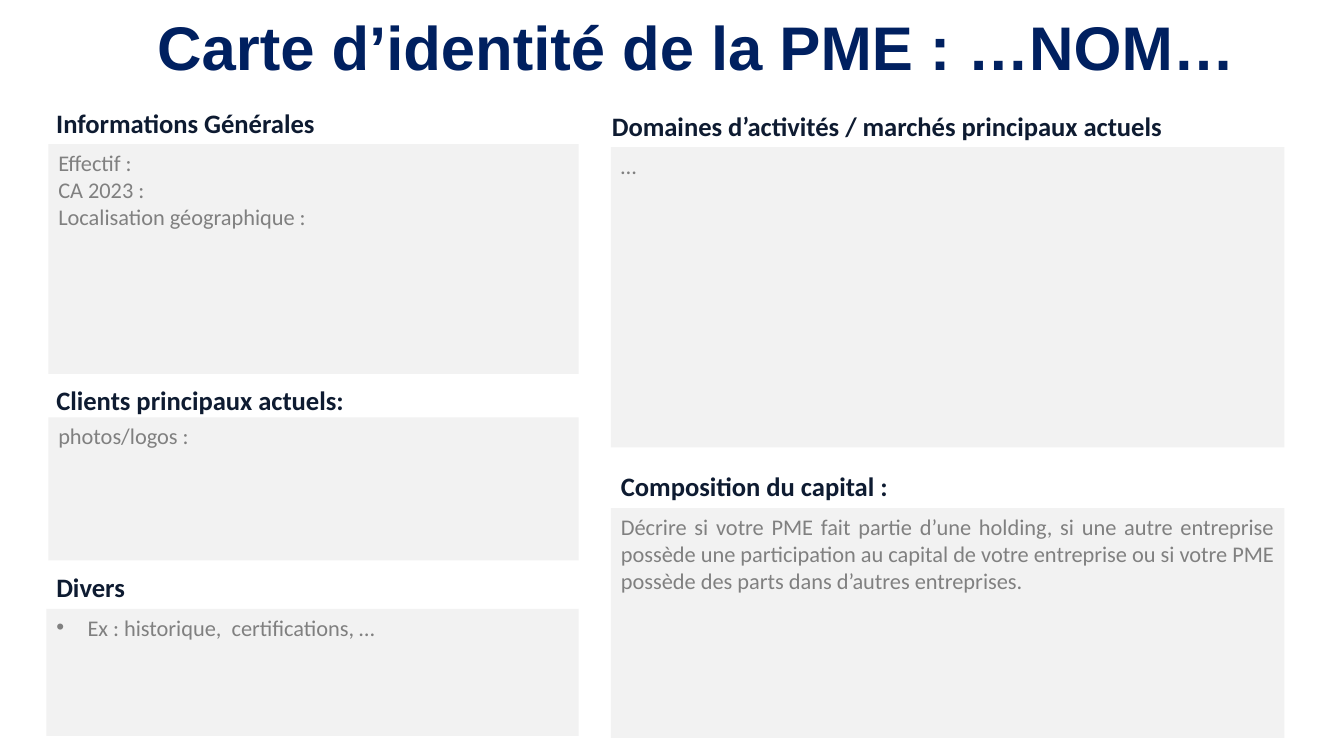
import pptx
import pptx.dml.color
import pptx.enum.shapes
import pptx.enum.text
import pptx.util
from lxml import etree

TITLE = "Carte d’identité de la PME : …NOM…"
NAVY, INK, GREY, PALE = "002060", "0E1B31", "808080", "F2F2F2"
WIDE, HIGH = 13.33, 7.5
LEFT, RIGHT = (0.48, 5.26), (6.06, 6.68)  # column start and width
EDGE = 0.46
HEAD = 0.42
JUST = pptx.enum.text.PP_ALIGN.JUSTIFY
START = pptx.enum.text.PP_ALIGN.LEFT

# heading, heading (left, top, width), column, panel (top, height),
# lines, alignment, bulleted
CARDS = [
    ("Informations Générales", (EDGE, 1.01, 5.86), LEFT, (1.43, 2.28),
     ["Effectif :", "CA 2023 :", "Localisation géographique :"], JUST, False),
    ("Clients principaux actuels:", (EDGE, 3.76, 3.69), LEFT, (4.14, 1.42),
     ["photos/logos :"], START, False),
    ("Divers", (EDGE, 5.61, 2.01), (EDGE, 5.28), (6.04, 1.26),
     ["Ex : historique,  certifications, …"], JUST, True),
    ("Domaines d’activités / marchés principaux actuels", (5.97, 1.04, 6.77),
     RIGHT, (1.46, 2.98), ["…"], JUST, False),
    ("Composition du capital :", (RIGHT[0], 4.61, 3.32), RIGHT, (5.04, 2.28),
     ["Décrire si votre PME fait partie d’une holding, si une autre entreprise "
      "possède une participation au capital de votre entreprise ou si votre PME "
      "possède des parts dans d’autres entreprises."], JUST, False),
]


def paint(text):
    return pptx.dml.color.RGBColor.from_string(text)


def place(*sides):
    return [pptx.util.Inches(side) for side in sides]


def write(shape, lines, size, face, tint, bold=False, align=START, dots=False):
    frame = shape.text_frame
    frame.word_wrap = True
    frame.vertical_anchor = pptx.enum.text.MSO_ANCHOR.TOP
    frame.text = "\n".join(lines)
    for para in frame.paragraphs:
        para.alignment = align
        if dots:
            add_dot(para)
        for run in para.runs:
            run.font.size = pptx.util.Pt(size)
            run.font.name = face
            run.font.bold = bold
            run.font.color.rgb = paint(tint)
    return frame


def add_dot(para):
    props = para._p.get_or_add_pPr()
    indent = pptx.util.Inches(0.31)
    props.set("marL", str(indent))
    props.set("indent", str(-indent))
    space = pptx.oxml.ns.qn
    etree.SubElement(props, space("a:buFont")).set("typeface", "Arial")
    etree.SubElement(props, space("a:buChar")).set("char", "•")


def add_card(shapes, head, spot, column, rows, lines, align, dots):
    start, width = column
    top, height = rows
    panel = shapes.add_shape(pptx.enum.shapes.MSO_SHAPE.RECTANGLE,
                             *place(start, top, width, height))
    panel.shadow.inherit = False
    panel.fill.solid()
    panel.fill.fore_color.rgb = paint(PALE)
    panel.line.fill.background()
    write(panel, lines, 16, "Calibri", GREY, align=align, dots=dots)
    label = shapes.add_textbox(*place(*spot, HEAD))
    write(label, [head], 19, "Calibri", INK, bold=True)


def main():
    deck = pptx.Presentation()
    deck.slide_width, deck.slide_height = place(WIDE, HIGH)
    shapes = deck.slides.add_slide(deck.slide_layouts[6]).shapes
    title = shapes.add_textbox(*place(1.46, 0.12, 11.11, 1.23))
    frame = write(title, [TITLE], 44, "Arial", NAVY, bold=True)
    frame.paragraphs[0].line_spacing = 0.9
    for card in CARDS:
        add_card(shapes, *card)
    deck.save("out.pptx")


if __name__ == "__main__":
    main()
